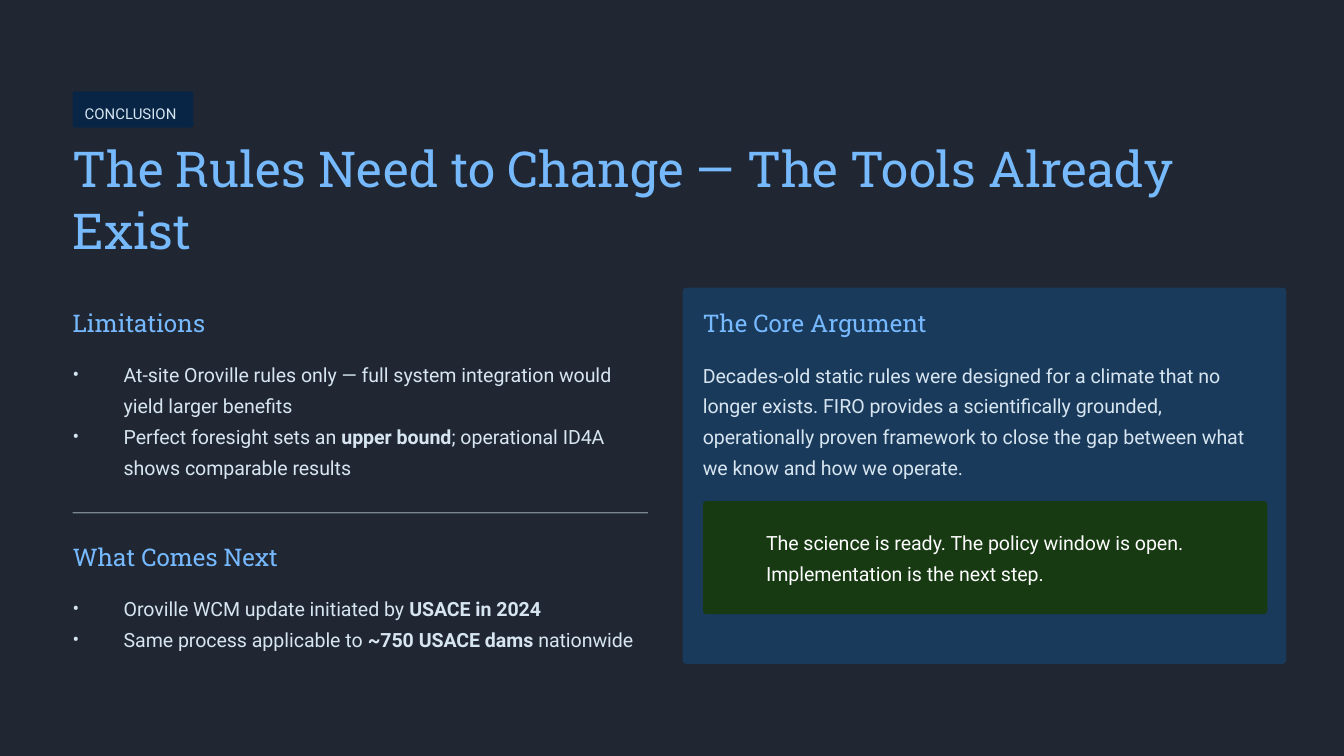
from lxml import etree
from pptx import Presentation
from pptx.dml.color import RGBColor
from pptx.enum.shapes import MSO_SHAPE
from pptx.enum.text import MSO_ANCHOR, MSO_AUTO_SIZE, PP_ALIGN
from pptx.oxml.ns import qn
from pptx.util import Inches, Pt

RECT = MSO_SHAPE.RECTANGLE
ROUNDED = MSO_SHAPE.ROUNDED_RECTANGLE
TOP = MSO_ANCHOR.TOP
LEFT = PP_ALIGN.LEFT
NO_AUTOFIT = MSO_AUTO_SIZE.NONE
TITLE_ONLY = 5

SLIDE_WIDTH = 10
SLIDE_HEIGHT = SLIDE_WIDTH * 9 / 16
LEFT_COLUMN, RIGHT_COLUMN = 0.54, 5.23
LEFT_WIDTH, RIGHT_WIDTH = 4.28, 4.2
HEADING_TO_BODY = 0.37


def rgb(hex_color):
    return RGBColor.from_string(hex_color)


def write_text(frame, paragraphs, *, size=10.5, font="Roboto", color="D6E5EF",
               leading=16.5, bullets=False, wrap=True):
    """Fill a text frame; parts between ** marks are bold."""
    frame.margin_left = frame.margin_right = 0
    frame.margin_top = frame.margin_bottom = 0
    frame.auto_size = NO_AUTOFIT
    frame.word_wrap = wrap
    frame.vertical_anchor = TOP
    for index, text in enumerate(paragraphs):
        paragraph = frame.add_paragraph() if index else frame.paragraphs[0]
        if bullets:
            properties = paragraph._p.get_or_add_pPr()
            indent = Inches(0.38)
            properties.set("marL", str(indent))
            properties.set("indent", str(-indent))
            etree.SubElement(properties, qn("a:buFont")).set("typeface", font)
            etree.SubElement(properties, qn("a:buChar")).set("char", "•")
        paragraph.alignment = LEFT
        paragraph.line_spacing = Pt(leading)
        for position, part in enumerate(text.split("**")):
            if not part:
                continue
            run = paragraph.add_run()
            run.text = part
            run.font.size = Pt(size)
            run.font.name = font
            run.font.bold = position % 2 == 1
            run.font.color.rgb = rgb(color)


class ConclusionSlide:
    ACCENT = "76B9FF"
    HEADING_FONT = "Roboto Slab"

    def __init__(self, presentation, background):
        layout = presentation.slide_layouts[TITLE_ONLY]
        self.slide = presentation.slides.add_slide(layout)
        fill = self.slide.background.fill
        fill.solid()
        fill.fore_color.rgb = rgb(background)

    def title(self, text, left, top, width, height):
        title = self.slide.shapes.title
        title.left, title.top = Inches(left), Inches(top)
        title.width, title.height = Inches(width), Inches(height)
        write_text(title.text_frame, [text], size=26.5, leading=33,
                   font=self.HEADING_FONT, color=self.ACCENT)

    def panel(self, left, top, width, height, color, corner=None, opacity=None):
        panel = self.slide.shapes.add_shape(
            RECT if corner is None else ROUNDED,
            Inches(left), Inches(top), Inches(width), Inches(height))
        if corner is not None:
            panel.adjustments[0] = corner
        panel.shadow.inherit = False
        panel.line.fill.background()
        panel.fill.solid()
        panel.fill.fore_color.rgb = rgb(color)
        if opacity is not None:
            srgb = panel._element.spPr.find(qn("a:solidFill")).find(qn("a:srgbClr"))
            etree.SubElement(srgb, qn("a:alpha")).set("val", str(opacity * 1000))

    def text(self, paragraphs, left, top, width, height, **style):
        box = self.slide.shapes.add_textbox(
            Inches(left), Inches(top), Inches(width), Inches(height))
        write_text(box.text_frame, paragraphs, **style)

    def section(self, heading, body, left, top, width, height, bullets=False):
        """Place a heading with its body text below."""
        self.text([heading], left, top, 1.84, 0.23, size=13, wrap=False,
                  font=self.HEADING_FONT, color=self.ACCENT)
        self.text(body, left, top + HEADING_TO_BODY, width, height, bullets=bullets)


def main():
    presentation = Presentation()
    presentation.slide_width = Inches(SLIDE_WIDTH)
    presentation.slide_height = Inches(SLIDE_HEIGHT)
    slide = ConclusionSlide(presentation, "202733")

    slide.panel(LEFT_COLUMN, 0.68, 0.9, 0.27, "082545", corner=0.07)
    slide.text(["CONCLUSION"], 0.63, 0.73, 0.72, 0.18, size=8, leading=13, wrap=False)
    slide.title("The Rules Need to Change — The Tools Already Exist",
                LEFT_COLUMN, 1.01, 8.91, 0.92)

    slide.section("Limitations", [
        "At-site Oroville rules only — full system integration would yield larger benefits",
        "Perfect foresight sets an **upper bound**; operational ID4A shows comparable results",
    ], LEFT_COLUMN, 2.28, LEFT_WIDTH, 0.97, bullets=True)
    slide.panel(LEFT_COLUMN, 3.81, LEFT_WIDTH, 0.01, "D6E5EF", opacity=50)
    slide.section("What Comes Next", [
        "Oroville WCM update initiated by **USACE in 2024**",
        "Same process applicable to **~750 USACE dams** nationwide",
    ], LEFT_COLUMN, 4.02, LEFT_WIDTH, 0.51, bullets=True)

    slide.panel(5.08, 2.14, 4.49, 2.8, "1A3A5C", corner=0.01)
    slide.section("The Core Argument", [
        "Decades-old static rules were designed for a climate that no longer exists. "
        "FIRO provides a scientifically grounded, operationally proven framework to "
        "close the gap between what we know and how we operate.",
    ], RIGHT_COLUMN, 2.28, RIGHT_WIDTH, 0.92)
    slide.panel(RIGHT_COLUMN, 3.73, RIGHT_WIDTH, 0.84, "183A13", corner=0.03)
    slide.text(["The science is ready. The policy window is open. "
                "Implementation is the next step."],
               5.7, 3.9, 3.57, 0.46, color="FFFFFF")

    presentation.save("out.pptx")


if __name__ == "__main__":
    main()
